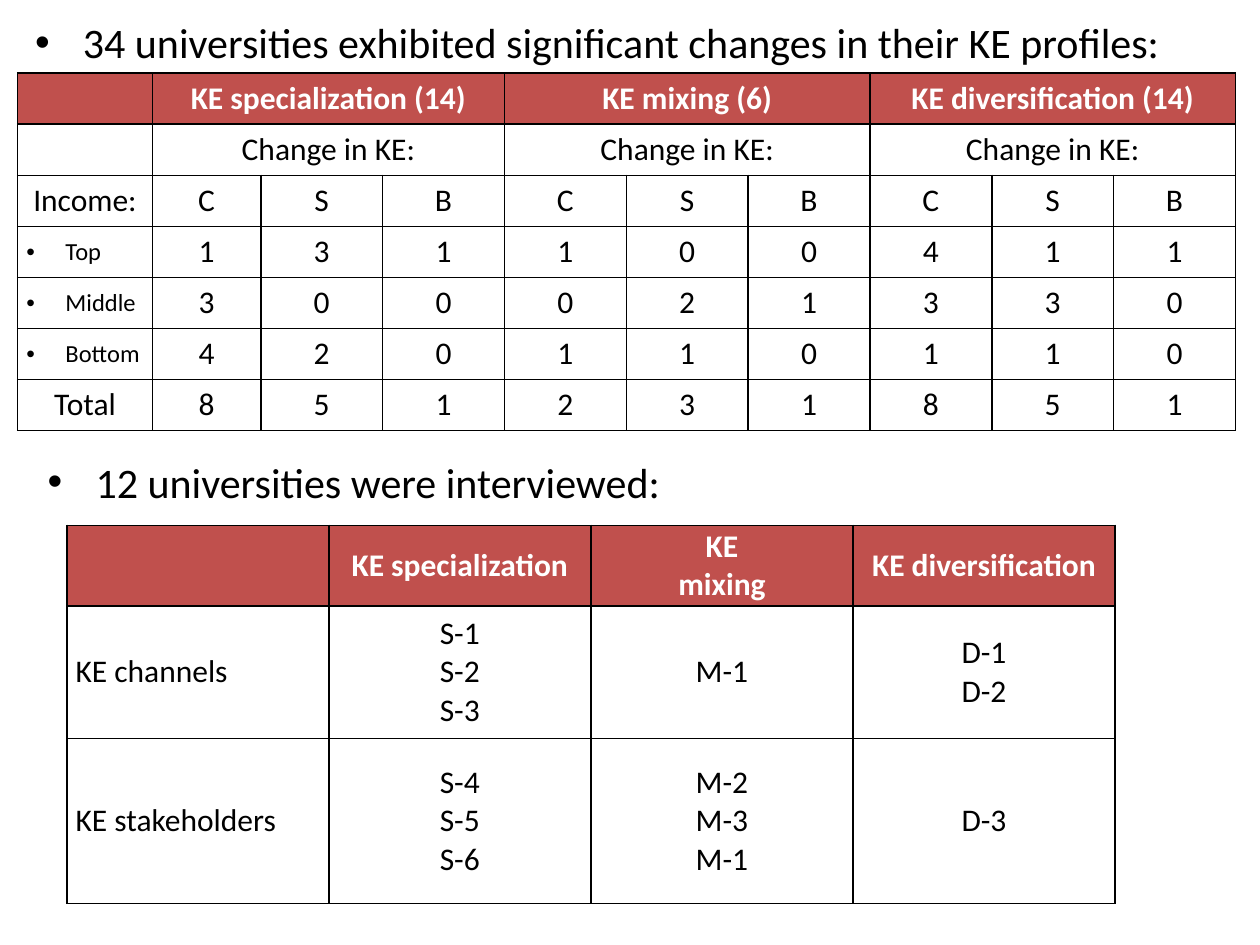
import pptx
import pptx.dml.color
import pptx.enum.text
import pptx.oxml
import pptx.oxml.ns
import pptx.util
from dataclasses import dataclass


@dataclass(frozen=True)
class Theme:
    font: str = "Calibri"
    heading: int = 24
    body: int = 18
    small: int = 14
    accent: str = "C0504D"
    light: str = "FFFFFF"
    dark: str = "000000"
    border: int = 1


theme = Theme()
align = pptx.enum.text.PP_ALIGN
namespace = pptx.oxml.ns.nsdecls("a")


def write(paragraph, text, size=theme.body, color=theme.dark, bold=False,
          alignment=align.LEFT, indent=0):
    """Set the text and font of a paragraph; an indent above 0 adds a bullet."""
    paragraph.text = text
    paragraph.alignment = alignment
    paragraph.font.name = theme.font
    paragraph.font.size = pptx.util.Pt(size)
    paragraph.font.bold = bold
    paragraph.font.color.rgb = pptx.dml.color.RGBColor.from_string(color)
    if indent:
        properties = paragraph._p.get_or_add_pPr()
        properties.set("marL", str(pptx.util.Inches(indent)))
        properties.set("indent", str(-pptx.util.Inches(indent)))
        for position, bullet in enumerate(('<a:buFont %s typeface="Arial"/>',
                                           '<a:buChar %s char="•"/>')):
            properties.insert(position, pptx.oxml.parse_xml(bullet % namespace))


def format_cell(cell, header):
    """Give a cell its margins, borders and fill."""
    cell.margin_left = cell.margin_right = pptx.util.Inches(0.07)
    cell.margin_top = cell.margin_bottom = 0
    cell.vertical_anchor = pptx.enum.text.MSO_ANCHOR.MIDDLE
    for side in ("lnL", "lnR", "lnT", "lnB"):
        cell._tc.get_or_add_tcPr().append(pptx.oxml.parse_xml(
            f'<a:{side} {namespace} w="{pptx.util.Pt(theme.border)}"><a:solidFill>'
            f'<a:srgbClr val="{theme.dark}"/></a:solidFill></a:{side}>'))
    if header:
        cell.fill.solid()
        cell.fill.fore_color.rgb = pptx.dml.color.RGBColor.from_string(theme.accent)
    else:
        cell.fill.background()


presentation = pptx.Presentation()
presentation.slide_width = pptx.util.Inches(10)
presentation.slide_height = pptx.util.Inches(7.5)
slide = presentation.slides.add_slide(presentation.slide_layouts[6])

# All positions are in hundredths of the slide's width and height.
column = presentation.slide_width / 100
row = presentation.slide_height / 100

changes = {"Top": [1, 3, 1, 1, 0, 0, 4, 1, 1],
           "Middle": [3, 0, 0, 0, 2, 1, 3, 3, 0],
           "Bottom": [4, 2, 0, 1, 1, 0, 1, 1, 0]}
totals = [sum(counts) for counts in zip(*changes.values())]
profiles = ["KE specialization (14)", "KE mixing (6)", "KE diversification (14)"]
profile_rows = [
    [""] + [text for profile in profiles for text in (profile, "", "")],
    [""] + ["Change in KE:", "", ""] * 3,
    ["Income:"] + ["C", "S", "B"] * 3,
    *([income, *counts] for income, counts in changes.items()),
    ["Total", *totals],
]
interview_rows = [
    ["", "KE specialization", "KE\nmixing", "KE diversification"],
    ["KE channels", "S-1\nS-2\nS-3", "M-1", "D-1\nD-2"],
    ["KE stakeholders", "S-4\nS-5\nS-6", "M-2\nM-3\nM-1", "D-3"],
]

# Rows, left, top, column widths, row heights, merged span, left-aligned labels
tables = [
    (interview_rows, 5.3, 55.6, [20.8] * 4, [8.53, 14, 17.47], 1,
     ["KE channels", "KE stakeholders"]),
    (profile_rows, 1.4, 7.73, [10.7, 8.6] + [9.67] * 8, [5.41] * 7, 3, list(changes)),
]
for rows, left, top, widths, heights, span, labels in tables:
    table = slide.shapes.add_table(
        len(rows), len(widths), int(left * column), int(top * row),
        int(sum(widths) * column), int(sum(heights) * row)).table
    table.first_row = table.horz_banding = False
    for grid_column, width in zip(table.columns, widths):
        grid_column.width = int(width * column)
    for grid_row, height in zip(table.rows, heights):
        grid_row.height = int(height * row)

    for r, values in enumerate(rows):
        for c, value in enumerate(values):
            cell = table.cell(r, c)
            header = r == 0
            format_cell(cell, header)
            for i, line in enumerate(str(value).split("\n")):
                frame = cell.text_frame
                paragraph = frame.add_paragraph() if i else frame.paragraphs[0]
                bulleted = value in changes
                write(paragraph, line,
                      size=theme.small if bulleted else theme.body,
                      color=theme.light if header else theme.dark, bold=header,
                      alignment=align.LEFT if value in labels else align.CENTER,
                      indent=0.31 if bulleted else 0)

    if span > 1:
        for r in range(2):
            for c in range(1, len(widths), span):
                table.cell(r, c).merge(table.cell(r, c + span - 1))

headings = [
    ("34 universities exhibited significant changes in their KE profiles:", 1.8, 1.07, 92.3),
    ("12 universities were interviewed:", 2.8, 47.6, 51.1),
]
for heading, left, top, width in headings:
    frame = slide.shapes.add_textbox(int(left * column), int(top * row),
                                     int(width * column), int(6.67 * row)).text_frame
    frame.word_wrap = False
    frame.auto_size = pptx.enum.text.MSO_AUTO_SIZE.SHAPE_TO_FIT_TEXT
    write(frame.paragraphs[0], heading, size=theme.heading, indent=0.38)

presentation.save("out.pptx")
